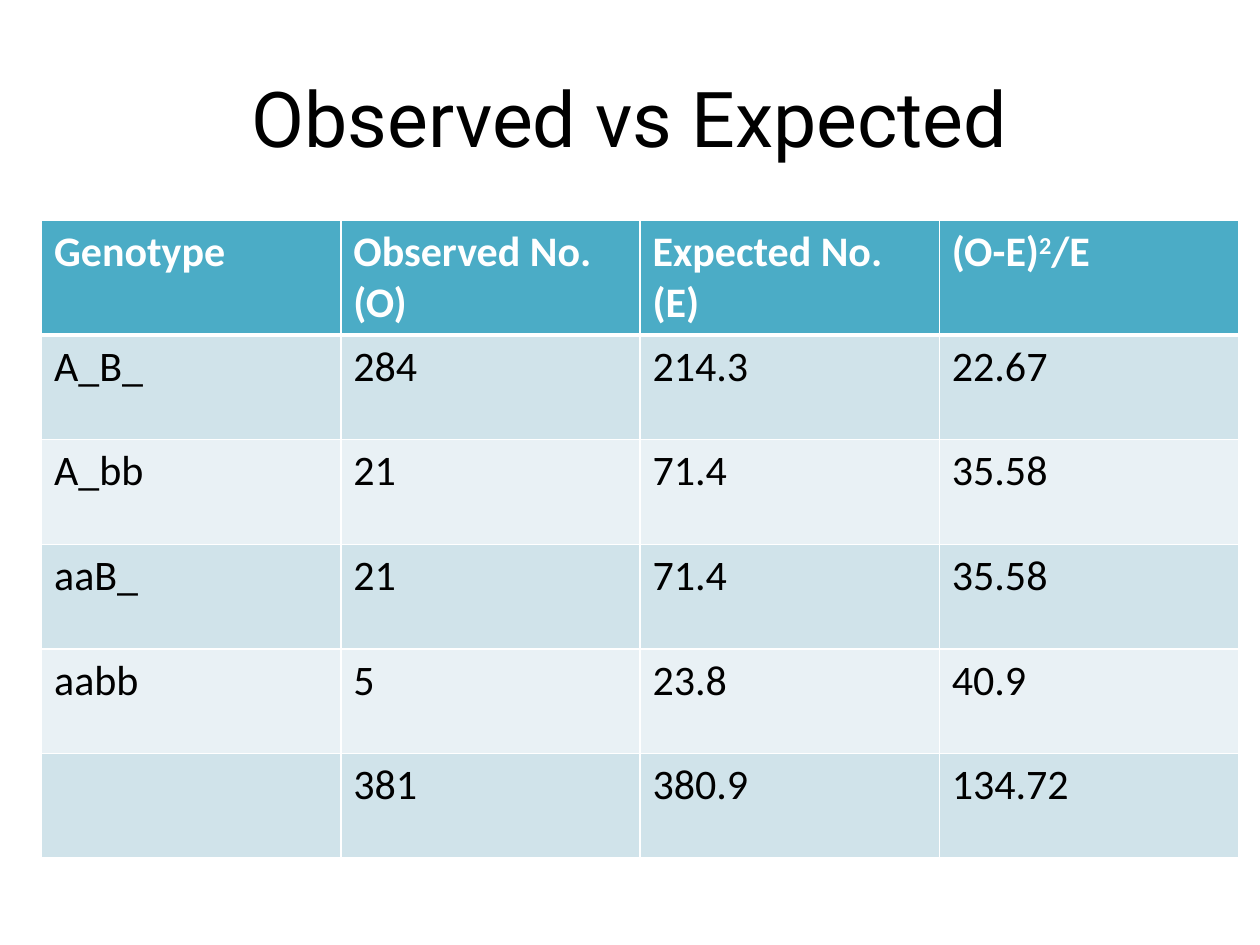
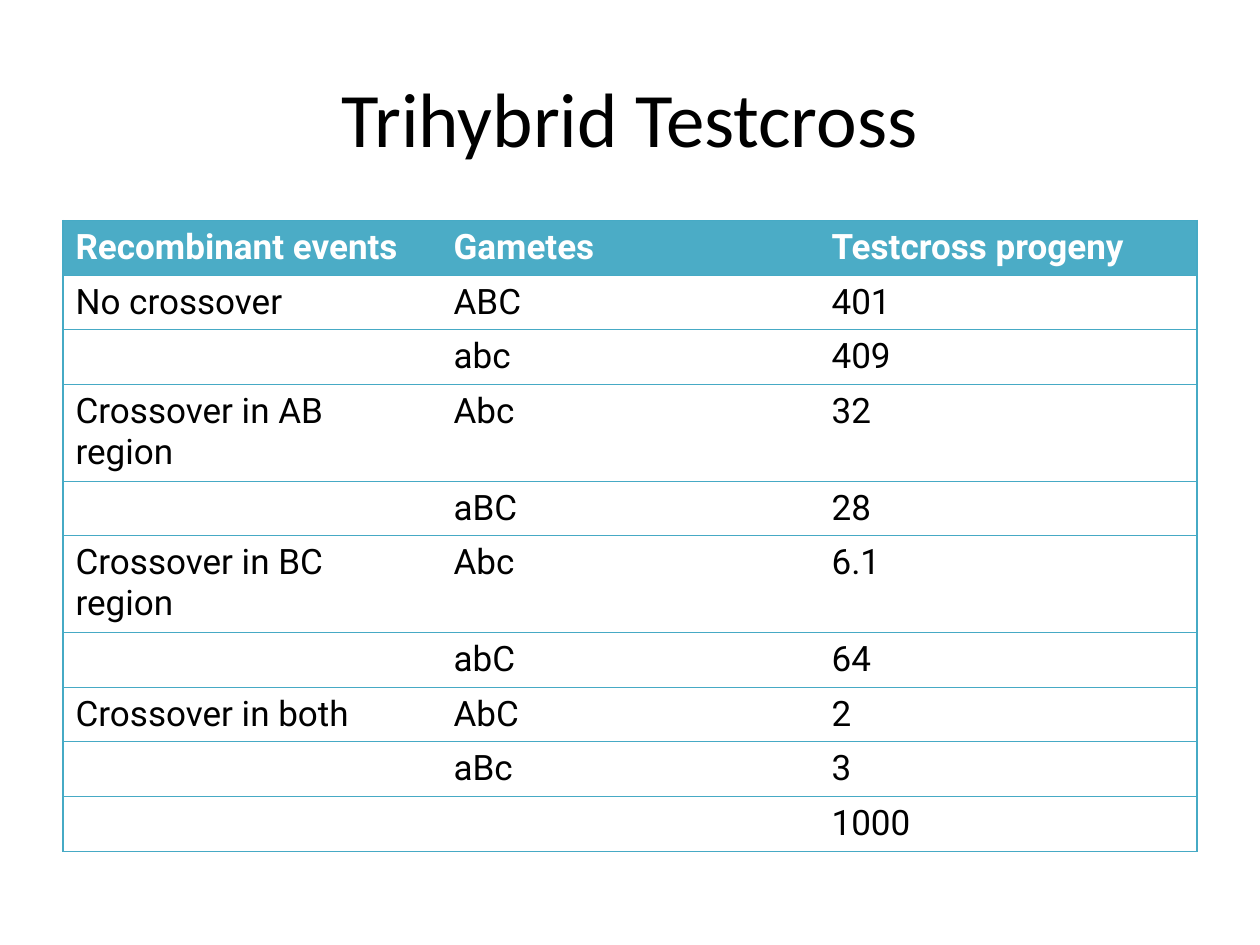
from lxml import etree
from pptx import Presentation
from pptx.dml.color import RGBColor
from pptx.enum.text import MSO_ANCHOR, PP_ALIGN
from pptx.oxml.ns import qn
from pptx.util import Inches, Pt

MIDDLE = MSO_ANCHOR.MIDDLE
CENTER = PP_ALIGN.CENTER

COLORS = {
    "text": "000000",
    "white": "FFFFFF",
    "header": "4BACC6",
    "rule": "46AAC5",
    "band_dark": "D0E3EA",
    "band_light": "E9F1F5",
}
TABLE_TOP = 1.75
SIDES = ("L", "R", "T", "B")

OBSERVED_ROWS = [
    ["Genotype", "Observed No. (O)", "Expected No. (E)", "(O-E)^2^/E"],
    ["A_B_", "284", "214.3", "22.67"],
    ["A_bb", "21", "71.4", "35.58"],
    ["aaB_", "21", "71.4", "35.58"],
    ["aabb", "5", "23.8", "40.9"],
    ["", "381", "380.9", "134.72"],
]
TESTCROSS_ROWS = [
    ["Recombinant events", "Gametes", "Testcross progeny"],
    ["No crossover", "ABC", "401"],
    ["", "abc", "409"],
    ["Crossover in AB region", "Abc", "32"],
    ["", "aBC", "28"],
    ["Crossover in BC region", "Abc", "6.1"],
    ["", "abC", "64"],
    ["Crossover in both", "AbC", "2"],
    ["", "aBc", "3"],
    ["", "", "1000"],
]


def grid_borders(row, col, row_count, col_count):
    """White grid with a heavier line below the header."""
    widths = dict.fromkeys(SIDES, 1)
    if row == 0:
        widths["B"] = 3
    elif row == 1:
        widths["T"] = 3
    return widths


def ruled_borders(row, col, row_count, col_count):
    """Outer frame and row rules, without inner vertical lines."""
    return {
        "L": 0.75 if col == 0 else 0,
        "R": 0.75 if col == col_count - 1 else 0,
        "T": 0.75,
        "B": 0.75,
    }


class Deck:
    def __init__(self):
        self.presentation = Presentation()
        self.presentation.slide_width = Inches(10)
        self.presentation.slide_height = Inches(7.5)
        self.slide = None

    def start_slide(self, title, font):
        blank = self.presentation.slide_layouts[6]
        self.slide = self.presentation.slides.add_slide(blank)
        box = self.slide.shapes.add_textbox(Inches(0.5), Inches(0.3), Inches(9), Inches(1.25))
        frame = box.text_frame
        frame.word_wrap = True
        frame.vertical_anchor = MIDDLE
        frame.text = title
        heading = frame.paragraphs[0]
        heading.alignment = CENTER
        self.format_run(heading.runs[0], font, 44, "text")

    def format_run(self, run, font, size, color, bold=False):
        run.font.name = font
        run.font.size = Pt(size)
        run.font.bold = bold
        run.font.color.rgb = RGBColor.from_string(COLORS[color])

    def write_cell(self, cell, text, font, size, color, bold):
        """Write text in which parts between ^ marks are superscript."""
        paragraph = cell.text_frame.paragraphs[0]
        for index, part in enumerate(text.split("^")):
            if not part:
                continue
            run = paragraph.add_run()
            run.text = part
            self.format_run(run, font, size, color, bold)
            if index % 2:
                run._r.get_or_add_rPr().set("baseline", "30000")

    def set_borders(self, cell, widths, color):
        properties = cell._tc.get_or_add_tcPr()
        for side in SIDES:
            line = etree.SubElement(properties, qn(f"a:ln{side}"), w=str(Pt(widths[side])))
            if widths[side]:
                fill = etree.SubElement(line, qn("a:solidFill"))
                etree.SubElement(fill, qn("a:srgbClr"), val=COLORS[color])
            else:
                etree.SubElement(line, qn("a:noFill"))

    def fill_cell(self, cell, color):
        if color is None:
            cell.fill.background()
        else:
            cell.fill.solid()
            cell.fill.fore_color.rgb = RGBColor.from_string(COLORS[color])

    def add_table(self, rows, left, width, heights, font, size, bands, borders, border_color):
        row_count, col_count = len(rows), len(rows[0])
        table = self.slide.shapes.add_table(
            row_count, col_count, Inches(left), Inches(TABLE_TOP),
            Inches(width), Inches(sum(heights))).table
        table.first_row = False
        table.horz_banding = False
        for column in table.columns:
            column.width = Inches(width / col_count)
        for r, values in enumerate(rows):
            table.rows[r].height = Inches(heights[r])
            is_header = r == 0
            fill = "header" if is_header else bands[(r - 1) % len(bands)]
            text_color = "white" if is_header else "text"
            for c, value in enumerate(values):
                cell = table.cell(r, c)
                self.write_cell(cell, value, font, size, text_color, is_header)
                self.set_borders(cell, borders(r, c, row_count, col_count), border_color)
                self.fill_cell(cell, fill)


def build_observed(deck):
    deck.start_slide("Observed vs Expected", "Roboto")
    heights = [0.91] + [0.83] * (len(OBSERVED_ROWS) - 1)
    deck.add_table(OBSERVED_ROWS, 0.33, 9.5, heights, "Calibri", 24,
                   ["band_dark", "band_light"], grid_borders, "white")


def build_testcross(deck):
    deck.start_slide("Trihybrid Testcross", "Calibri")
    heights = [0.75 if row[0].endswith("region") else 0.43 for row in TESTCROSS_ROWS]
    deck.add_table(TESTCROSS_ROWS, 0.5, 9, heights, "Roboto", 20,
                   [None], ruled_borders, "rule")


def main():
    deck = Deck()
    build_observed(deck)
    build_testcross(deck)
    deck.presentation.save("out.pptx")


if __name__ == "__main__":
    main()
